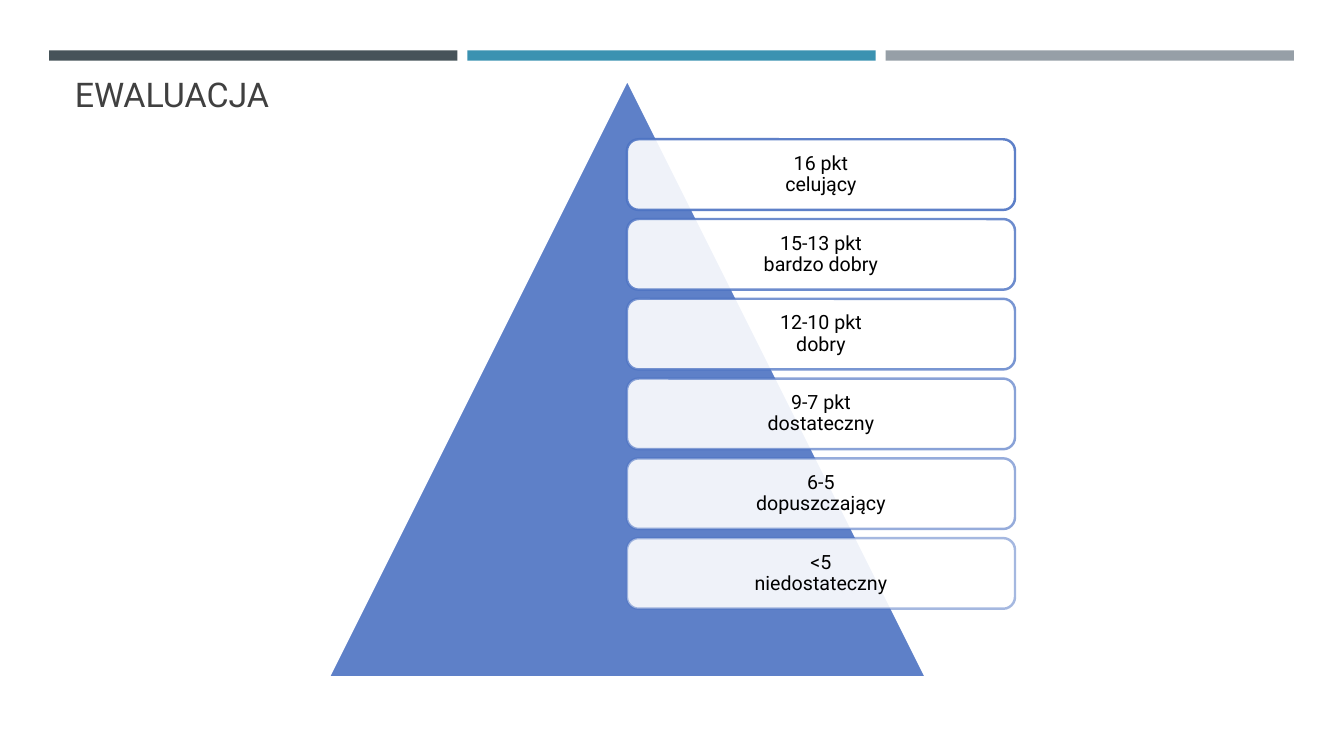
"""Build the grading pyramid slide."""
from dataclasses import dataclass

from lxml.etree import SubElement
from pptx import Presentation
from pptx.dml.color import RGBColor
from pptx.enum.shapes import MSO_SHAPE
from pptx.enum.text import MSO_ANCHOR, MSO_AUTO_SIZE, PP_ALIGN
from pptx.oxml.ns import qn
from pptx.util import Cm, Pt


@dataclass(frozen=True)
class Theme:
    font: str = "Roboto"
    title_size: float = 24.3
    grade_size: float = 14
    outline_width: float = 1.75
    line_spacing: float = 0.9
    title_color: str = "404040"
    grade_color: str = "000000"
    pyramid_color: str = "4D73C3"
    white: str = "FFFFFF"
    bar_colors: tuple = ("465359", "3B92B1", "969FA7")


THEME = Theme()
GRADES = (
    ("16 pkt", "celujący"),
    ("15-13 pkt", "bardzo dobry"),
    ("12-10 pkt", "dobry"),
    ("9-7 pkt", "dostateczny"),
    ("6-5", "dopuszczający"),
    ("<5", "niedostateczny"),
)


def paint(color_format, color, opacity=100):
    color_format.solid()
    color_format.fore_color.rgb = RGBColor.from_string(color)
    return opacity


def set_opacity(parent, percent):
    color = parent.find(qn("a:solidFill")).find(qn("a:srgbClr"))
    SubElement(color, qn("a:alpha")).set("val", str(percent * 1000))


def add_filled_shape(slide, kind, left, top, width, height, color):
    shape = slide.shapes.add_shape(kind, Cm(left), Cm(top), Cm(width), Cm(height))
    shape.shadow.inherit = False
    paint(shape.fill, color)
    return shape


def outline(shape, color):
    paint(shape.line.fill, color)
    shape.line.width = Pt(THEME.outline_width)


def add_run(paragraph, text, size, color):
    run = paragraph.add_run()
    run.text = text
    run.font.name = THEME.font
    run.font.size = Pt(size)
    run.font.color.rgb = RGBColor.from_string(color)


def add_bars(slide):
    for index, color in enumerate(THEME.bar_colors):
        bar = add_filled_shape(slide, MSO_SHAPE.RECTANGLE,
                               1.24 + index * 10.54, 1.27, 10.29, 0.26, color)
        bar.line.fill.background()


def add_title(slide, text):
    title = slide.shapes.title
    title.left, title.top = Cm(1.63), Cm(1.96)
    title.width, title.height = Cm(30.63), Cm(1.07)
    frame = title.text_frame
    frame.auto_size = MSO_AUTO_SIZE.NONE
    frame.vertical_anchor = MSO_ANCHOR.BOTTOM
    paragraph = frame.paragraphs[0]
    paragraph.alignment = PP_ALIGN.LEFT
    paragraph.line_spacing = THEME.line_spacing
    add_run(paragraph, text, THEME.title_size, THEME.title_color)


def add_pyramid(slide):
    pyramid = add_filled_shape(slide, MSO_SHAPE.ISOSCELES_TRIANGLE,
                               8.28, 2.01, 15.06, 15.06, THEME.pyramid_color)
    set_opacity(pyramid.element.spPr, 90)
    outline(pyramid, THEME.white)


def add_grade(slide, index, points, grade):
    box = add_filled_shape(slide, MSO_SHAPE.ROUNDED_RECTANGLE,
                           15.8, 3.51 + index * 2.01, 9.78, 1.78, THEME.white)
    set_opacity(box.element.spPr, 90)
    outline(box, THEME.pyramid_color)
    set_opacity(box.element.spPr.find(qn("a:ln")), 90 - index * 8)
    frame = box.text_frame
    frame.word_wrap = True
    frame.vertical_anchor = MSO_ANCHOR.MIDDLE
    frame.margin_left = frame.margin_right = Cm(0.15)
    frame.margin_top = frame.margin_bottom = Cm(0.15)
    paragraph = frame.paragraphs[0]
    paragraph.alignment = PP_ALIGN.CENTER
    paragraph.line_spacing = THEME.line_spacing
    add_run(paragraph, points, THEME.grade_size, THEME.grade_color)
    paragraph.add_line_break()
    add_run(paragraph, grade, THEME.grade_size, THEME.grade_color)


def main():
    presentation = Presentation()
    presentation.slide_width, presentation.slide_height = Cm(33.87), Cm(19.05)
    slide = presentation.slides.add_slide(presentation.slide_layouts[5])
    add_bars(slide)
    add_title(slide, "EWALUACJA")
    add_pyramid(slide)
    for index, (points, grade) in enumerate(GRADES):
        add_grade(slide, index, points, grade)
    presentation.save("out.pptx")


if __name__ == "__main__":
    main()
